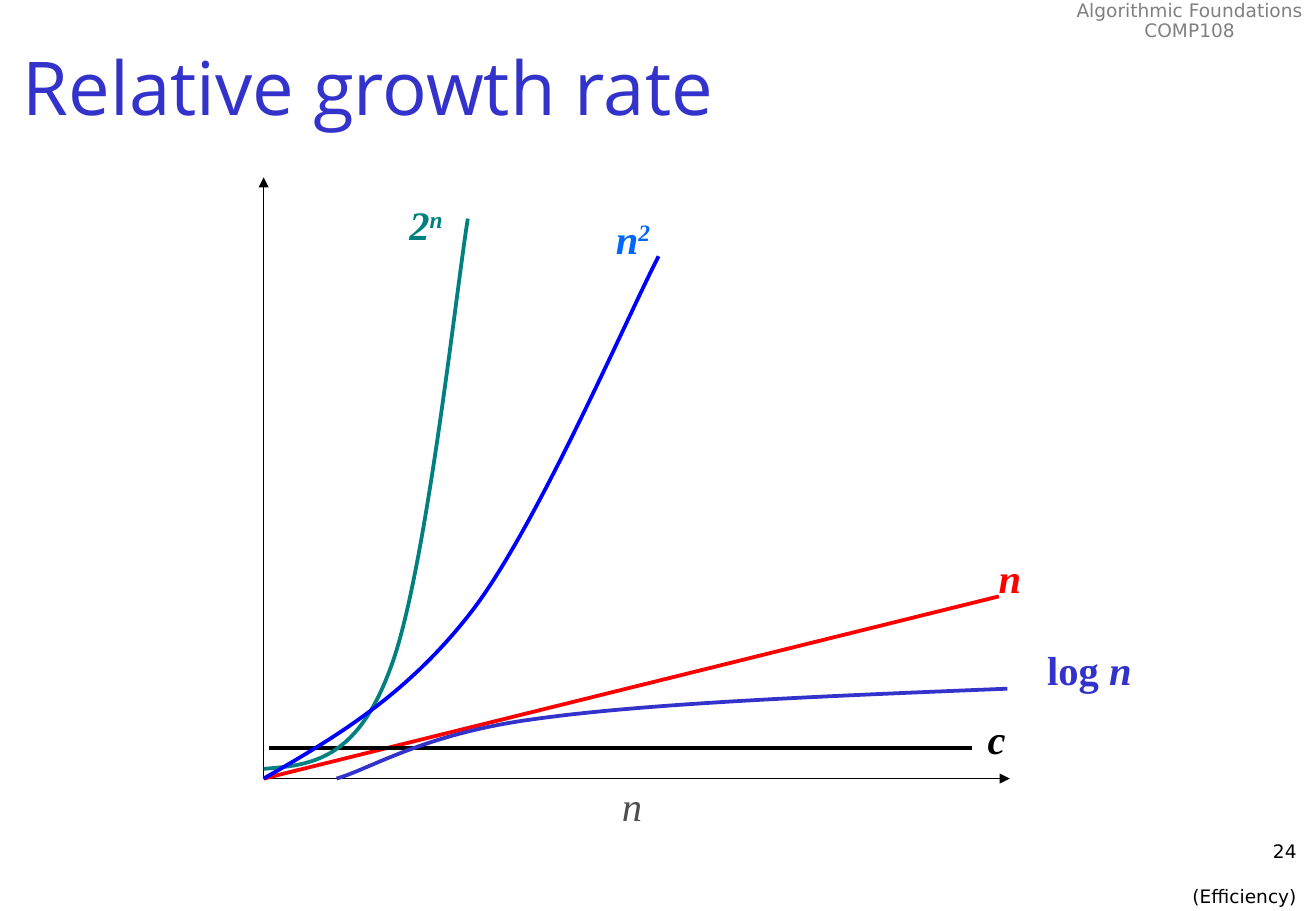
from collections import namedtuple

from lxml.etree import SubElement
from pptx import Presentation
from pptx.dml.color import RGBColor
from pptx.enum.shapes import MSO_CONNECTOR as CONN
from pptx.enum.text import MSO_ANCHOR as ANCHOR, MSO_AUTO_SIZE as FIT, PP_ALIGN as ALIGN
from pptx.oxml.ns import qn
from pptx.util import Inches, Pt

Box = namedtuple("Box", "left top width height")

BLACK = RGBColor(0x00, 0x00, 0x00)
GREY = RGBColor(0x80, 0x80, 0x80)
DARK_GREY = RGBColor(0x4D, 0x4D, 0x4D)
INDIGO = RGBColor(0x33, 0x33, 0xCC)
SKY = RGBColor(0x00, 0x66, 0xFF)
BLUE = RGBColor(0x00, 0x00, 0xFF)
TEAL = RGBColor(0x00, 0x80, 0x80)
RED = RGBColor(0xFF, 0x00, 0x00)

SLIDE_W, SLIDE_H = 10.83, 7.5
THIN, THICK = 0.75, 2.25

SMALL = {"name": "DejaVu Sans", "size": Pt(11)}
TITLE = {"name": "Open Sans", "size": Pt(44)}
MATH = {"name": "Times New Roman", "size": Pt(24)}
BOLD = {"bold": True}
ITALIC = {"italic": True}
TERM = {**BOLD, **ITALIC}
SUPER = {**TERM, "baseline": "30000"}
HUG = {"word_wrap": False, "auto_size": FIT.SHAPE_TO_FIT_TEXT}

CURVES = [
    (TEAL, [(0, 0.08), (0.38, 0.11), (0.76, 0.14), (1.04, 0.9),
            (1.33, 1.65), (1.58, 3.99), (1.68, 4.61)]),
    (BLUE, [(0, 0), (0.59, 0.34), (1.19, 0.69), (1.73, 1.4),
            (2.27, 2.12), (3, 3.82), (3.25, 4.3)]),
    (INDIGO, [(6.12, 0.74), (4.64, 0.68), (3.15, 0.62), (2.23, 0.49),
              (1.32, 0.37), (0.88, 0.08), (0.6, 0)]),
]

LINES = [
    ((0.02, 0), (6.14, 0), BLACK, THIN, True),
    ((0, 0), (0, 4.95), BLACK, THIN, True),
    ((0, 0), (6.05, 1.5), RED, THICK, False),
    ((0.04, 0.25), (5.83, 0.25), BLACK, THICK, False),
]

LABELS = [
    (2.8, 4.7, 0.5, SKY, [("n", TERM), ("2", SUPER)]),
    (2.85, 0.03, 0.37, DARK_GREY, [("n", ITALIC)]),
    (1.1, 4.81, 0.49, TEAL, [("2", TERM), ("n", SUPER)]),
    (5.95, 1.91, 0.39, RED, [("n", TERM)]),
    (6.35, 1.15, 0.9, INDIGO, [("log ", BOLD), ("n", TERM)]),
    (5.86, 0.58, 0.35, BLACK, [("c", TERM)]),
]


def add_text(s, box, paragraphs, font, color, para=None, frame=None):
    sp = s.shapes.add_textbox(*map(Inches, box))
    tf = sp.text_frame
    for key, value in {"word_wrap": True, **(frame or {})}.items():
        setattr(tf, key, value)
    for i, runs in enumerate(paragraphs):
        p = tf.paragraphs[0] if i == 0 else tf.add_paragraph()
        for key, value in (para or {}).items():
            setattr(p, key, value)
        for text, extra in runs:
            r = p.add_run()
            r.text = text
            r.font.color.rgb = color
            for key, value in {**font, **extra}.items():
                if key == "baseline":
                    r.font._element.set(key, value)
                else:
                    setattr(r.font, key, value)
    return tf


def style_line(sp, color, width):
    sp.line.color.rgb = color
    sp.line.width = Pt(width)


def add_line(s, start, end, color, width, arrow):
    sp = s.shapes.add_connector(CONN.STRAIGHT, *map(Inches, (*start, *end)))
    style_line(sp, color, width)
    sp_pr = sp._element.spPr
    if arrow:
        SubElement(sp_pr.find(qn("a:ln")), qn("a:tailEnd"), type="triangle")
    SubElement(sp_pr, qn("a:effectLst"))


def add_curve(s, points, color):
    start, *rest = [tuple(map(Inches, point)) for point in points]
    builder = s.shapes.build_freeform(*start)
    builder.add_line_segments(rest, close=False)
    sp = builder.convert_to_shape()
    sp.shadow.inherit = False
    sp.fill.background()
    style_line(sp, color, THICK)
    outline = next(sp._element.iter(qn("a:path")))
    segments = outline.findall(qn("a:lnTo"))
    for i in range(0, len(segments), 3):
        cubic = SubElement(outline, qn("a:cubicBezTo"))
        for segment in segments[i:i + 3]:
            cubic.append(segment[0])
            outline.remove(segment)


def course_header(s, box):
    add_text(s, box, [[("Algorithmic Foundations", {})], [("COMP108", {})]],
             SMALL, GREY, {"alignment": ALIGN.CENTER, "line_spacing": 0.9}, HUG)


def page_footer(s, box):
    tf = add_text(s, box, [[("24", {})], [("(Efficiency)", {})]],
                  SMALL, BLACK, {"alignment": ALIGN.RIGHT})
    tf.paragraphs[1].space_before = Pt(13)


def slide_title(s, box):
    add_text(s, box, [[("Relative growth rate", {})]], TITLE, INDIGO,
             frame={"vertical_anchor": ANCHOR.MIDDLE})


def growth_plot(s, box):
    def at(point):
        return box.left + point[0], box.top + box.height - point[1]

    for start, end, *style in LINES:
        add_line(s, at(start), at(end), *style)
    for color, points in CURVES:
        add_curve(s, [at(point) for point in points], color)
    for x, y, width, color, runs in LABELS:
        add_text(s, Box(*at((x, y)), width, 0.5), [runs], MATH, color, frame=HUG)


def main():
    prs = Presentation()
    prs.slide_width, prs.slide_height = Inches(SLIDE_W), Inches(SLIDE_H)
    s = prs.slides.add_slide(prs.slide_layouts[6])
    course_header(s, Box(SLIDE_W - 2.08, -0.04, 2.08, 0.43))
    page_footer(s, Box(8.51, 6.87, 2.26, 0.5))
    slide_title(s, Box(0.09, 0.08, SLIDE_W - 0.09, 1.25))
    growth_plot(s, Box(2.17, 1.46, 6.14, 4.95))
    prs.save("out.pptx")


if __name__ == "__main__":
    main()
